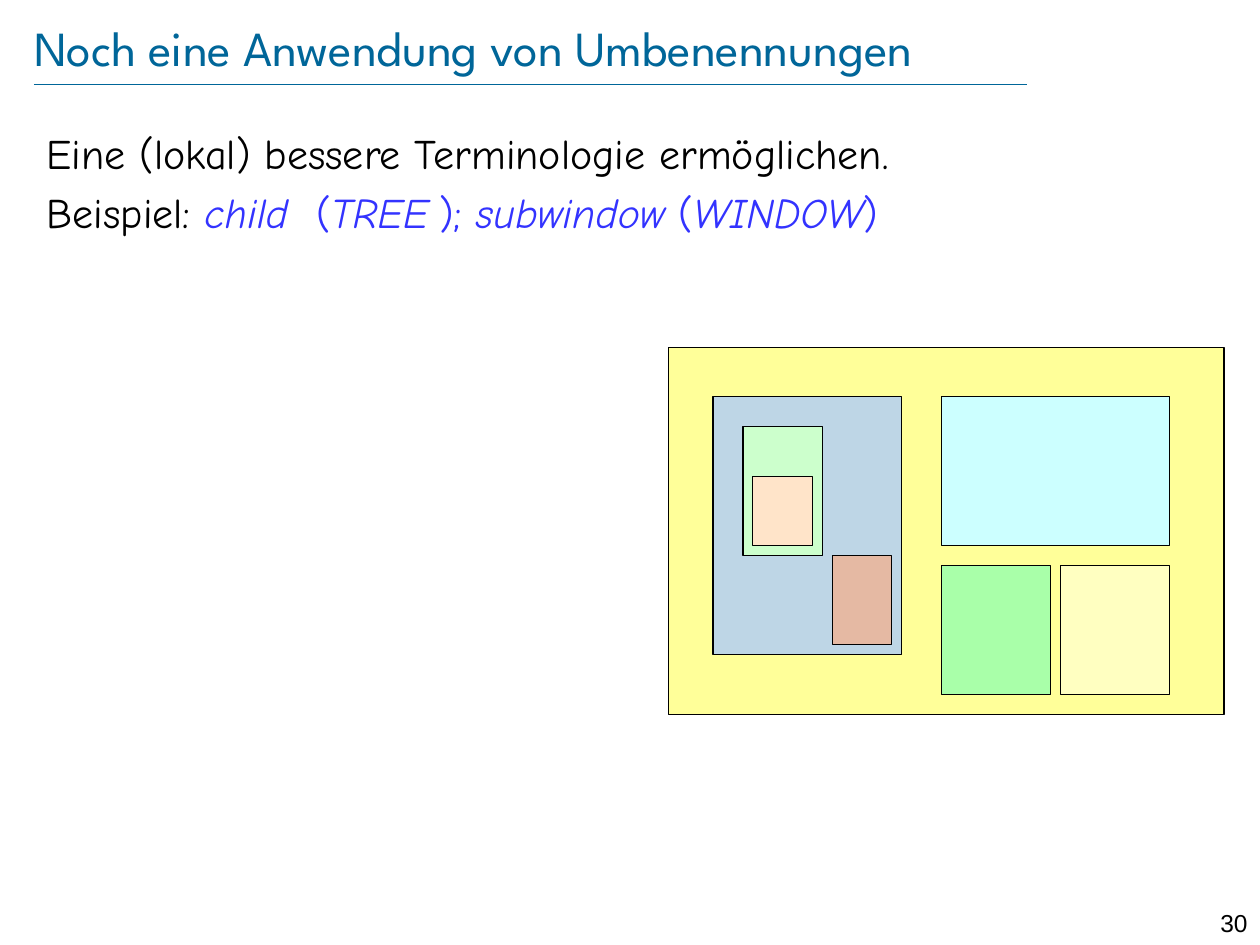
from lxml.etree import SubElement
from pptx import Presentation
from pptx.dml.color import RGBColor
from pptx.enum.shapes import MSO_CONNECTOR, MSO_SHAPE
from pptx.enum.text import MSO_ANCHOR, MSO_AUTO_SIZE, PP_ALIGN
from pptx.oxml.ns import qn
from pptx.util import Inches, Mm, Pt

WIDTH, HEIGHT = Inches(10), Inches(7.5)
COLORS = {
    "title": "006699", "text": "000000", "term": "3333FF", "border": "000000",
    "screen": "FFFF99", "blue": "BED6E6", "mint": "CCFFCC", "peach": "FFE4C9",
    "brown": "E5B9A3", "cyan": "CCFFFF", "green": "A9FFA9", "cream": "FFFFC1",
}
TITLE_FONT, BODY_FONT, NUMBER_FONT = "League Spartan", "Comic Neue", "Arial"

# Nested windows on a grid of 2 mm cells: color, column, row, columns, rows
CELL = Mm(2)
WINDOWS = [
    ("screen", 0, 0, 56, 37),
    ("blue", 4.5, 5, 19, 26),
    ("mint", 7.5, 8, 8, 13),
    ("peach", 8.5, 13, 6, 7),
    ("brown", 16.5, 21, 6, 9),
    ("cyan", 27.5, 5, 23, 15),
    ("green", 27.5, 22, 11, 13),
    ("cream", 39.5, 22, 11, 13),
]

# Text, color, italic, size
BODY = [
    [("Eine (lokal) bessere Terminologie ermöglichen.", "text", False, 24)],
    [
        ("Beispiel: ", "text", False, 24),
        ("child", "term", True, 24),
        ("  (", "term", False, 24),
        ("TREE", "term", True, 24),
        (" ", "term", True, 18),
        ("); ", "term", False, 24),
        ("subwindow", "term", True, 24),
        (" (", "term", False, 24),
        ("WINDOW", "term", True, 24),
        (")", "term", False, 24),
    ],
]


def color(name):
    return RGBColor.from_string(COLORS[name])


def across(percent):
    return round(WIDTH * percent / 100)


def down(percent):
    return round(HEIGHT * percent / 100)


def place(shape, left, top, width, height):
    """Position a shape in percent of the slide's size."""
    shape.left, shape.top = across(left), down(top)
    shape.width, shape.height = across(width), down(height)


def add_run(paragraph, text, font_name, size, color_name, italic=False):
    run = paragraph.add_run()
    run.text = text
    run.font.name = font_name
    run.font.size = Pt(size)
    run.font.italic = italic
    run.font.color.rgb = color(color_name)


def remove_bullet(paragraph):
    properties = paragraph._p.get_or_add_pPr()
    properties.set("marL", "0")
    properties.set("indent", "0")
    SubElement(properties, qn("a:buNone"))


def fill_title(title):
    place(title, 2.7, 1.73, 91.4, 6.4)
    frame = title.text_frame
    frame.auto_size = MSO_AUTO_SIZE.NONE
    frame.vertical_anchor = MSO_ANCHOR.MIDDLE
    frame.margin_left = frame.margin_top = frame.margin_right = frame.margin_bottom = 0
    paragraph = frame.paragraphs[0]
    paragraph.alignment = PP_ALIGN.LEFT
    add_run(paragraph, "Noch eine Anwendung von Umbenennungen", TITLE_FONT, 28, "title")


def fill_body(body):
    place(body, 2.7, 12.8, 94, 82.27)
    frame = body.text_frame
    frame.auto_size = MSO_AUTO_SIZE.NONE
    for index, runs in enumerate(BODY):
        paragraph = frame.add_paragraph() if index else frame.paragraphs[0]
        remove_bullet(paragraph)
        paragraph.space_before = Pt(4.8 if index else 0)
        for text, color_name, italic, size in runs:
            add_run(paragraph, text, BODY_FONT, size, color_name, italic)


def add_title_rule(slide):
    rule = slide.shapes.add_connector(
        MSO_CONNECTOR.STRAIGHT, across(2.7), down(8.93), across(81.5), down(8.93))
    rule.line.color.rgb = color("title")
    rule.line.width = Pt(0.25)
    SubElement(rule._element.spPr, qn("a:effectLst"))


def add_page_number(slide, number):
    box = slide.shapes.add_textbox(0, 0, 0, 0)
    place(box, 94.5, 95.47, 5.5, 3.2)
    box.text_frame.word_wrap = True
    paragraph = box.text_frame.paragraphs[0]
    paragraph.alignment = PP_ALIGN.RIGHT
    add_run(paragraph, number, NUMBER_FONT, 14, "text")


def add_window(slide, fill, column, row, columns, rows):
    window = slide.shapes.add_shape(
        MSO_SHAPE.RECTANGLE,
        across(53.06) + round(column * CELL), down(36.75) + row * CELL,
        columns * CELL, rows * CELL)
    window.shadow.inherit = False
    window.fill.solid()
    window.fill.fore_color.rgb = color(fill)
    window.line.color.rgb = color("border")
    window.line.width = Pt(0.75)


def main():
    presentation = Presentation()
    presentation.slide_width, presentation.slide_height = WIDTH, HEIGHT
    slide = presentation.slides.add_slide(presentation.slide_layouts[1])
    add_title_rule(slide)
    add_page_number(slide, "30")
    fill_title(slide.shapes.title)
    fill_body(slide.placeholders[1])
    for window in WINDOWS:
        add_window(slide, *window)
    presentation.save("out.pptx")


if __name__ == "__main__":
    main()
